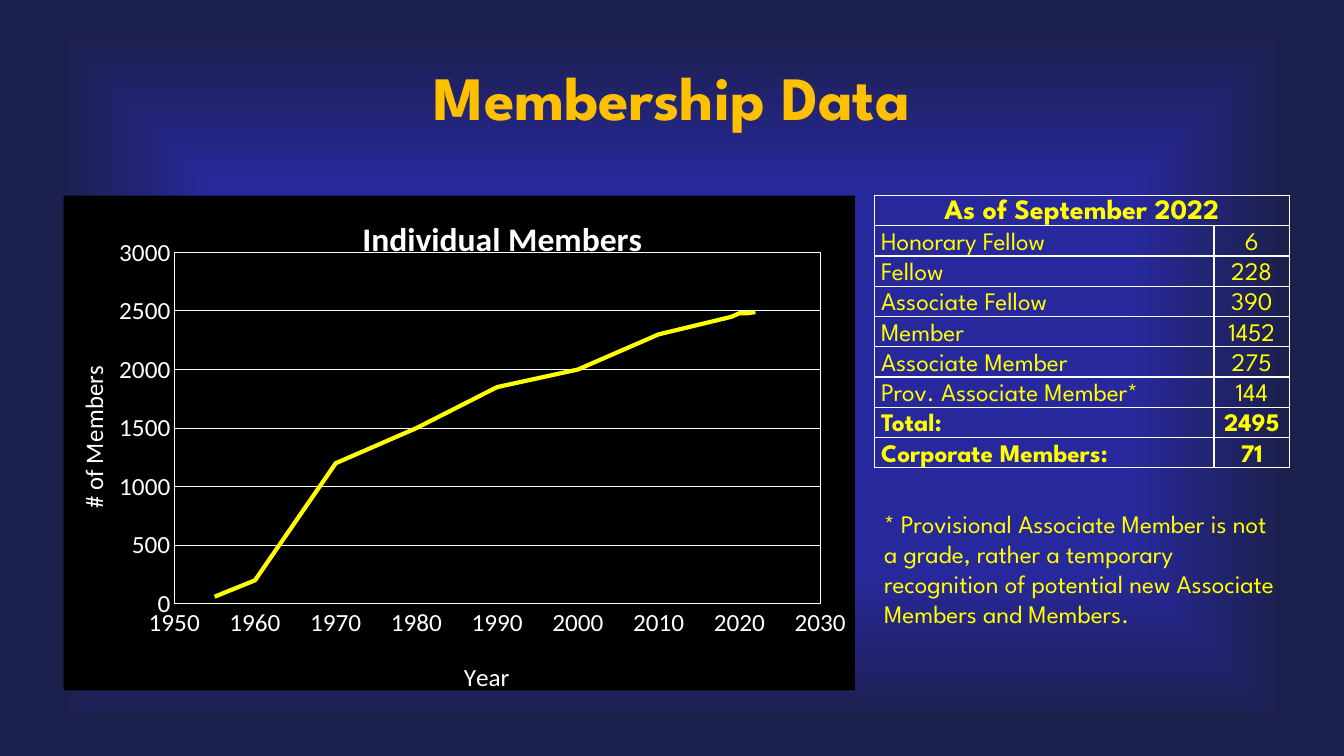
from lxml import etree
from pptx import Presentation
from pptx import util as u
from pptx.chart import data
from pptx.dml.color import RGBColor
from pptx.enum import chart as charts, text
from pptx.oxml import parse_xml
from pptx.oxml.ns import nsdecls, qn

COLORS = {
    "glow": "28289D",
    "night": "1C204D",
    "gold": "FFC000",
    "yellow": "FFFF00",
    "white": "FFFFFF",
    "black": "000000",
}
HEADING_FONT = "League Spartan"
CHART_FONT = "Calibri"
MEMBERS_BY_YEAR = [
    (1955, 60), (1960, 200), (1970, 1200), (1980, 1500), (1990, 1850),
    (2000, 2000), (2010, 2300), (2019, 2450), (2020, 2480), (2021, 2480),
    (2022, 2490),
]
GRADES = [
    ("Honorary Fellow", "6"),
    ("Fellow", "228"),
    ("Associate Fellow", "390"),
    ("Member", "1452"),
    ("Associate Member", "275"),
    ("Prov. Associate Member*", "144"),
    ("Total:", "2495"),
    ("Corporate Members:", "71"),
]
BOLD_LABELS = ("Total:", "Corporate Members:")


def rgb(name):
    return RGBColor.from_string(COLORS[name])


def line_xml(tag, color, points):
    return parse_xml(
        f'<a:{tag} {nsdecls("a")} w="{u.Pt(points)}"><a:solidFill>'
        f'<a:srgbClr val="{COLORS[color]}"/></a:solidFill></a:{tag}>'
    )


def set_background(slide):
    fill = slide.background.fill
    fill.gradient()
    for stop, color, position in zip(fill.gradient_stops, ("glow", "night"), (0.5, 0.91)):
        stop.color.rgb = rgb(color)
        stop.position = position
    gradient = slide._element.find(".//" + qn("a:gradFill"))
    linear = gradient.find(qn("a:lin"))
    gradient.replace(linear, parse_xml(
        f'<a:path {nsdecls("a")} path="shape">'
        '<a:fillToRect l="50000" t="50000" r="50000" b="50000"/></a:path>'
    ))


def add_run(paragraph, wording, size, color, font=HEADING_FONT, bold=False):
    run = paragraph.add_run()
    run.text = wording
    run.font.size = u.Pt(size)
    run.font.name = font
    run.font.bold = bold
    run.font.color.rgb = rgb(color)
    return run


def add_text(slide, box, wording, size, color, bold=False,
             align=text.PP_ALIGN.LEFT, anchor=text.MSO_ANCHOR.TOP):
    shape = slide.shapes.add_textbox(*map(u.Inches, box))
    frame = shape.text_frame
    frame.word_wrap = True
    frame.vertical_anchor = anchor
    paragraph = frame.paragraphs[0]
    paragraph.alignment = align
    return add_run(paragraph, wording, size, color, bold=bold)


def set_layout(parent, inner=False, **position):
    """Place a chart part by fractions of the chart's size."""
    for previous in parent.findall(qn("c:layout")):
        parent.remove(previous)
    layout = etree.Element(qn("c:layout"))
    manual = etree.SubElement(layout, qn("c:manualLayout"))
    settings = {"layoutTarget": "inner"} if inner else {}
    settings.update(xMode="edge", yMode="edge", **position)
    for tag, value in settings.items():
        etree.SubElement(manual, qn("c:" + tag)).set("val", str(value))
    text_part = parent.find(qn("c:tx"))
    if text_part is None:
        parent.insert(0, layout)
    else:
        text_part.addnext(layout)


def set_title(owner, wording, size, x, y, bold=False):
    owner.has_title = True
    title = owner.chart_title if hasattr(owner, "chart_title") else owner.axis_title
    add_run(title.text_frame.paragraphs[0], wording, size, "white", CHART_FONT, bold)
    set_layout(title._element, x=x, y=y)


def style_axis(axis, low, high, step):
    axis.minimum_scale, axis.maximum_scale, axis.major_unit = low, high, step
    axis.major_tick_mark = axis.minor_tick_mark = charts.XL_TICK_MARK.NONE
    font = axis.tick_labels.font
    font.size, font.name = u.Pt(18), CHART_FONT
    font.color.rgb = rgb("white")
    style_line(axis.format.line, "white", 0.75)


def style_line(line, color, points):
    line.color.rgb = rgb(color)
    line.width = u.Pt(points)


def add_members_chart(slide, box):
    points = data.XyChartData()
    series_data = points.add_series("Individual Members")
    for year, members in MEMBERS_BY_YEAR:
        series_data.add_data_point(year, members)
    chart = slide.shapes.add_chart(
        charts.XL_CHART_TYPE.XY_SCATTER_LINES_NO_MARKERS,
        *map(u.Inches, box), points).chart
    chart.has_legend = False
    chart.font.name, chart.font.size = HEADING_FONT, u.Pt(10)
    chart.font.color.rgb = rgb("white")
    set_title(chart, "Individual Members", 24, 0.37, 0.03, bold=True)

    years, members = chart.category_axis, chart.value_axis
    style_axis(years, 1950, 2030, 10)
    style_axis(members, 0, 3000, 500)
    years.has_major_gridlines = False
    members.has_major_gridlines = True
    style_line(members.major_gridlines.format.line, "white", 0.75)
    set_title(years, "Year", 18, 0.5, 0.93)
    set_title(members, "# of Members", 18, 0.01, 0.34)

    chart.plots[0].vary_by_categories = False
    series = chart.plots[0].series[0]
    series.smooth = False
    series.marker.style = charts.XL_MARKER_STYLE.NONE
    style_line(series.format.line, "yellow", 3)

    chart_part = chart._chartSpace.find(qn("c:chart"))
    chart_part.addnext(parse_xml(
        f'<c:spPr {nsdecls("c", "a")}><a:solidFill><a:srgbClr val="{COLORS["black"]}"/>'
        '</a:solidFill><a:ln><a:noFill/></a:ln></c:spPr>'
    ))
    plot_area = chart_part.find(qn("c:plotArea"))
    set_layout(plot_area, inner=True, x=0.14, y=0.115, w=0.816, h=0.71)
    frame = etree.SubElement(plot_area, qn("c:spPr"))
    etree.SubElement(frame, qn("a:noFill"))
    frame.append(line_xml("ln", "white", 0.75))


def fill_cell(cell, wording, size, bold, align):
    cell.margin_left = u.Inches(0.07 if align == text.PP_ALIGN.LEFT else 0.01)
    cell.margin_right = cell.margin_top = u.Inches(0.01)
    cell.margin_bottom = 0
    cell.vertical_anchor = text.MSO_ANCHOR.BOTTOM
    paragraph = cell.text_frame.paragraphs[0]
    paragraph.alignment = align
    if wording:
        add_run(paragraph, wording, size, "yellow", bold=bold)
    properties = cell._tc.get_or_add_tcPr()
    for side in ("lnL", "lnR", "lnT", "lnB"):
        properties.append(line_xml(side, "white", 1))
    cell.fill.background()


def add_grades_table(slide, box):
    table = slide.shapes.add_table(len(GRADES) + 1, 2, *map(u.Inches, box)).table
    table.first_row = table.horz_banding = False
    table.columns[0].width, table.columns[1].width = u.Inches(3.37), u.Inches(0.75)
    for row in table.rows:
        row.height = u.Inches(0.3)
    center = text.PP_ALIGN.CENTER
    table.cell(0, 0).merge(table.cell(0, 1))
    fill_cell(table.cell(0, 0), "As of September 2022", 20, True, center)
    fill_cell(table.cell(0, 1), "", 20, True, center)
    for row, (grade, count) in enumerate(GRADES, 1):
        bold = grade in BOLD_LABELS
        fill_cell(table.cell(row, 0), grade, 18, bold, text.PP_ALIGN.LEFT)
        fill_cell(table.cell(row, 1), count, 18, bold, center)


def main():
    presentation = Presentation()
    presentation.slide_width, presentation.slide_height = u.Inches(13.33), u.Inches(7.5)
    slide = presentation.slides.add_slide(presentation.slide_layouts[6])
    set_background(slide)
    add_members_chart(slide, (0.63, 1.94, 7.85, 5.01))
    add_grades_table(slide, (8.67, 1.94, 4.12, 2.7))
    title = add_text(slide, (0, 0.12, 13.33, 1.67), "Membership Data", 44, "gold", True,
                     text.PP_ALIGN.CENTER, text.MSO_ANCHOR.MIDDLE)
    title.font._element.insert(0, line_xml("ln", "black", 0.75))
    add_text(slide, (8.67, 4.99, 4.12, 1.62),
             "* Provisional Associate Member is not a grade, rather a temporary "
             "recognition of potential new Associate Members and Members.", 18, "yellow")
    presentation.save("out.pptx")


if __name__ == "__main__":
    main()
